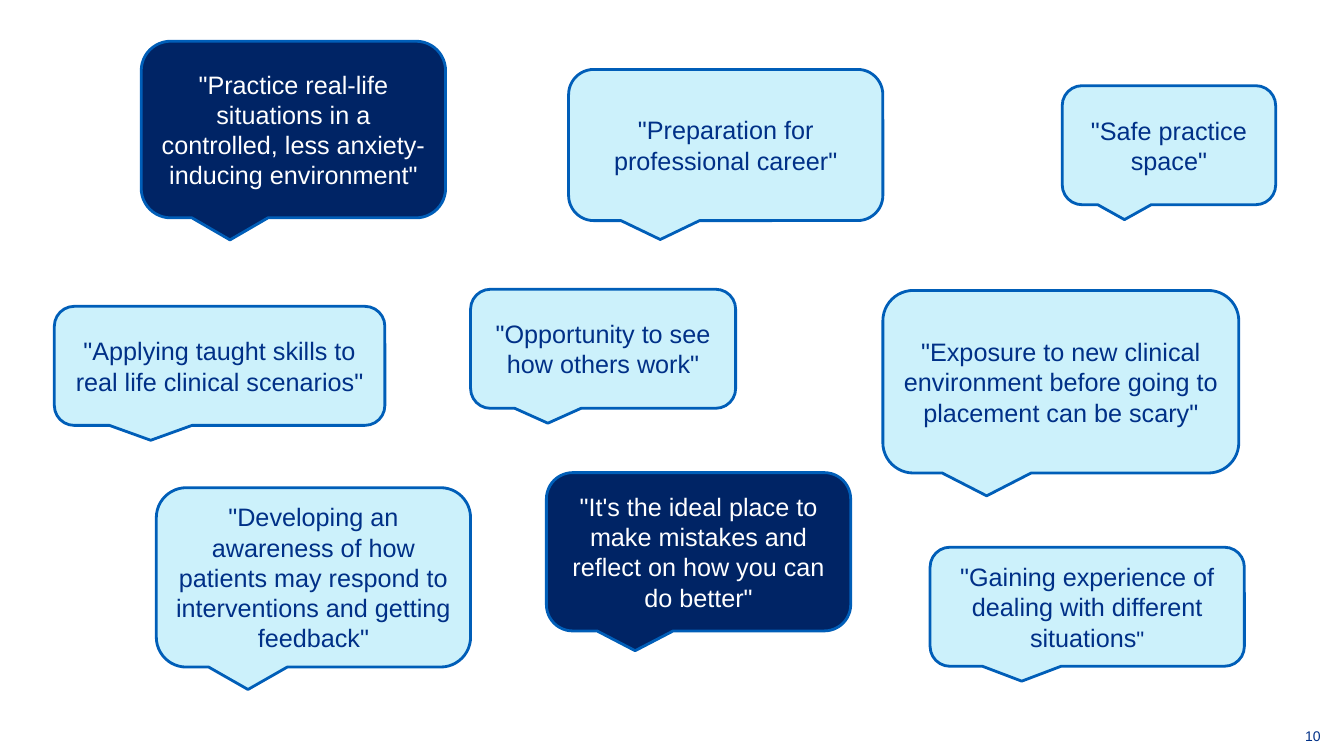
import pptx
import pptx.dml.color
import pptx.enum.shapes
import pptx.enum.text
import pptx.util

Cm = pptx.util.Cm
Pt = pptx.util.Pt
RGBColor = pptx.dml.color.RGBColor

NAVY = RGBColor(0x00, 0x24, 0x65)
BLUE = RGBColor(0x00, 0x30, 0x87)
OUTLINE = RGBColor(0x00, 0x5E, 0xB8)
PALE = RGBColor(0xCC, 0xF1, 0xFB)
WHITE = RGBColor(0xFF, 0xFF, 0xFF)

PLAIN = (PALE, BLUE)
STRONG = (NAVY, WHITE)

QUOTES = [
    ("Safe practice space", (26.77, 2.16, 5.38, 3), PLAIN, 18),
    ("Preparation for professional career", (14.33, 1.75, 7.92, 3.81), PLAIN, 18),
    ("Opportunity to see how others work", (11.86, 7.29, 6.68, 3), PLAIN, 18),
    ("Practice real-life situations in a controlled, less anxiety-inducing environment",
     (3.56, 1.04, 7.67, 4.45), STRONG, 18),
    ("Applying taught skills to real life clinical scenarios",
     (1.37, 7.72, 8.33, 3), PLAIN, 18),
    ("Exposure to new clinical environment before going to placement can be scary",
     (22.25, 7.32, 8.97, 4.6), PLAIN, 18),
    ("It's the ideal place to make mistakes and reflect on how you can do better",
     (13.77, 11.91, 7.67, 3.99), STRONG, 18),
    ("Developing an awareness of how patients may respond to interventions and getting feedback",
     (3.94, 12.29, 7.92, 4.52), PLAIN, 18),
    ("Gaining experience of dealing with different situations",
     (23.44, 13.79, 7.92, 3), PLAIN, 16),
]


def write_text(shape, text, size, color, alignment):
    frame = shape.text_frame
    frame.word_wrap = True
    frame.vertical_anchor = pptx.enum.text.MSO_ANCHOR.MIDDLE
    paragraph = frame.paragraphs[0]
    paragraph.alignment = alignment
    paragraph.font.name = "Arial"
    paragraph.font.size = Pt(size)
    paragraph.font.color.rgb = color
    paragraph.add_run().text = text
    return paragraph


def add_quote(slide, text, box, style, closing_size):
    fill, color = style
    shape = slide.shapes.add_shape(
        pptx.enum.shapes.MSO_SHAPE.ROUNDED_RECTANGULAR_CALLOUT, *map(Cm, box))
    shape.shadow.inherit = False
    shape.fill.solid()
    shape.fill.fore_color.rgb = fill
    shape.line.color.rgb = OUTLINE
    shape.line.width = Pt(2)
    center = pptx.enum.text.PP_ALIGN.CENTER
    if closing_size == 18:
        write_text(shape, f'"{text}"', 18, color, center)
    else:
        paragraph = write_text(shape, f'"{text}', 18, color, center)
        closing_mark = paragraph.add_run()
        closing_mark.text = '"'
        closing_mark.font.size = Pt(closing_size)


def add_page_number(slide, number, box):
    shape = slide.shapes.add_textbox(*map(Cm, box))
    write_text(shape, number, 10, BLUE, pptx.enum.text.PP_ALIGN.RIGHT)


def main():
    presentation = pptx.Presentation()
    presentation.slide_width = Cm(33.87)
    presentation.slide_height = Cm(19.05)
    slide = presentation.slides.add_slide(presentation.slide_layouts[6])
    add_page_number(slide, "10", (32.18, 18.03, 1.35, 1.02))
    for text, box, style, closing_size in QUOTES:
        add_quote(slide, text, box, style, closing_size)
    presentation.save("out.pptx")


if __name__ == "__main__":
    main()
